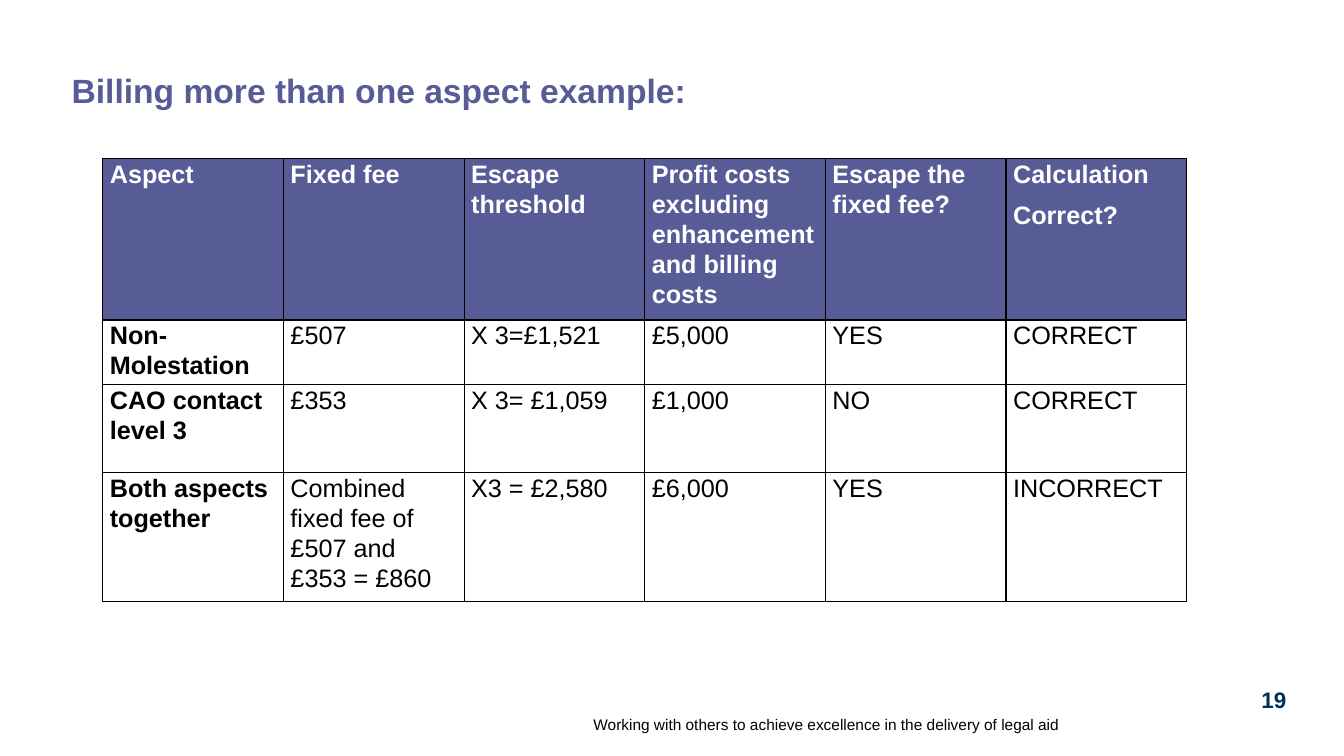
"""Build the slide on billing more than one aspect; lengths are percentages of the slide."""
from dataclasses import dataclass

from lxml.etree import SubElement
from pptx import Presentation
from pptx.dml.color import RGBColor
from pptx.enum.text import MSO_ANCHOR, PP_ALIGN
from pptx.oxml.ns import qn
from pptx.slide import Slide
from pptx.table import _Cell
from pptx.text.text import _Paragraph
from pptx.util import Inches, Length, Pt

SLIDE_WIDTH, SLIDE_HEIGHT = 13.33, 7.5
FONT = "Arial"
PURPLE, NAVY, BLACK, WHITE = "575C96", "003057", "000000", "FFFFFF"
TABLE_LEFT, TABLE_TOP, TABLE_WIDTH = 7.65, 20.93, 80.65
ROW_HEIGHTS = (20.8, 8.13, 11.6, 16.53)
ROWS = (
    ("Aspect", "Fixed fee", "Escape threshold",
     "Profit costs excluding enhancement and billing costs",
     "Escape the fixed fee?", "Calculation\nCorrect?"),
    ("Non-Molestation", "£507", "X 3=£1,521", "£5,000", "YES", "CORRECT"),
    ("CAO contact level 3", "£353", "X 3= £1,059", "£1,000", "NO", "CORRECT"),
    ("Both aspects together", "Combined fixed fee of £507 and £353 = £860",
     "X3 = £2,580", "£6,000", "YES", "INCORRECT"),
)


@dataclass(frozen=True)
class Label:
    text: str
    left: float
    top: float
    width: float
    height: float
    size: int
    color: str
    bold: bool = True
    alignment: PP_ALIGN = PP_ALIGN.LEFT
    anchor: MSO_ANCHOR = MSO_ANCHOR.TOP
    line_spacing: float = 1.0


LABELS = (
    Label("Working with others to achieve excellence in the delivery of legal aid",
          4.28, 92.27, 74.57, 4.8, 11, BLACK, bold=False,
          alignment=PP_ALIGN.RIGHT, anchor=MSO_ANCHOR.BOTTOM),
    Label("Billing more than one aspect example:",
          5.33, 9.87, 90.32, 5.07, 24, PURPLE, line_spacing=0.9),
    Label("19", 93.32, 90.8, 2.93, 3.73, 16, NAVY, alignment=PP_ALIGN.CENTER),
)


def across(percent: float) -> Length:
    return Inches(SLIDE_WIDTH * percent / 100)


def down(percent: float) -> Length:
    return Inches(SLIDE_HEIGHT * percent / 100)


def color_of(value: str) -> RGBColor:
    return RGBColor.from_string(value)


def add_run(paragraph: _Paragraph, text: str, size: int, color: str, bold: bool) -> None:
    run = paragraph.add_run()
    run.text = text
    run.font.name = FONT
    run.font.size = Pt(size)
    run.font.bold = bold
    run.font.color.rgb = color_of(color)


def add_label(slide: Slide, label: Label) -> None:
    shape = slide.shapes.add_textbox(
        across(label.left), down(label.top), across(label.width), down(label.height))
    frame = shape.text_frame
    frame.word_wrap = True
    frame.vertical_anchor = label.anchor
    frame.margin_left = frame.margin_right = frame.margin_top = frame.margin_bottom = 0
    paragraph = frame.paragraphs[0]
    paragraph.alignment = label.alignment
    paragraph.line_spacing = label.line_spacing
    add_run(paragraph, label.text, label.size, label.color, label.bold)


def add_borders(cell: _Cell) -> None:
    properties = cell._tc.get_or_add_tcPr()
    for side in ("a:lnL", "a:lnR", "a:lnT", "a:lnB"):
        line = SubElement(properties, qn(side), w=str(Pt(1)))
        fill = SubElement(line, qn("a:solidFill"))
        SubElement(fill, qn("a:srgbClr"), val=BLACK)


def fill_cell(cell: _Cell, text: str, header: bool, bold: bool) -> None:
    cell.margin_left = cell.margin_right = Inches(0.07)
    cell.margin_top = cell.margin_bottom = 0
    add_borders(cell)
    if header:
        cell.fill.solid()
        cell.fill.fore_color.rgb = color_of(PURPLE)
    else:
        cell.fill.background()
    frame = cell.text_frame
    for index, line in enumerate(text.split("\n")):
        paragraph = frame.add_paragraph() if index else frame.paragraphs[0]
        paragraph.line_spacing = 1.07
        paragraph.space_after = Pt(8)
        add_run(paragraph, line, 18, WHITE if header else BLACK, bold)


def add_fee_table(slide: Slide) -> None:
    column_count = len(ROWS[0])
    table = slide.shapes.add_table(
        len(ROWS), column_count, across(TABLE_LEFT), down(TABLE_TOP),
        across(TABLE_WIDTH), down(sum(ROW_HEIGHTS))).table
    table.horz_banding = False
    for column in table.columns:
        column.width = across(TABLE_WIDTH / column_count)
    for row_index, (texts, height) in enumerate(zip(ROWS, ROW_HEIGHTS)):
        table.rows[row_index].height = down(height)
        header = row_index == 0
        for column_index, text in enumerate(texts):
            cell = table.cell(row_index, column_index)
            fill_cell(cell, text, header, bold=header or column_index == 0)


def main() -> None:
    presentation = Presentation()
    presentation.slide_width = Inches(SLIDE_WIDTH)
    presentation.slide_height = Inches(SLIDE_HEIGHT)
    slide = presentation.slides.add_slide(presentation.slide_layouts[6])
    for label in LABELS:
        add_label(slide, label)
    add_fee_table(slide)
    presentation.save("out.pptx")


if __name__ == "__main__":
    main()
